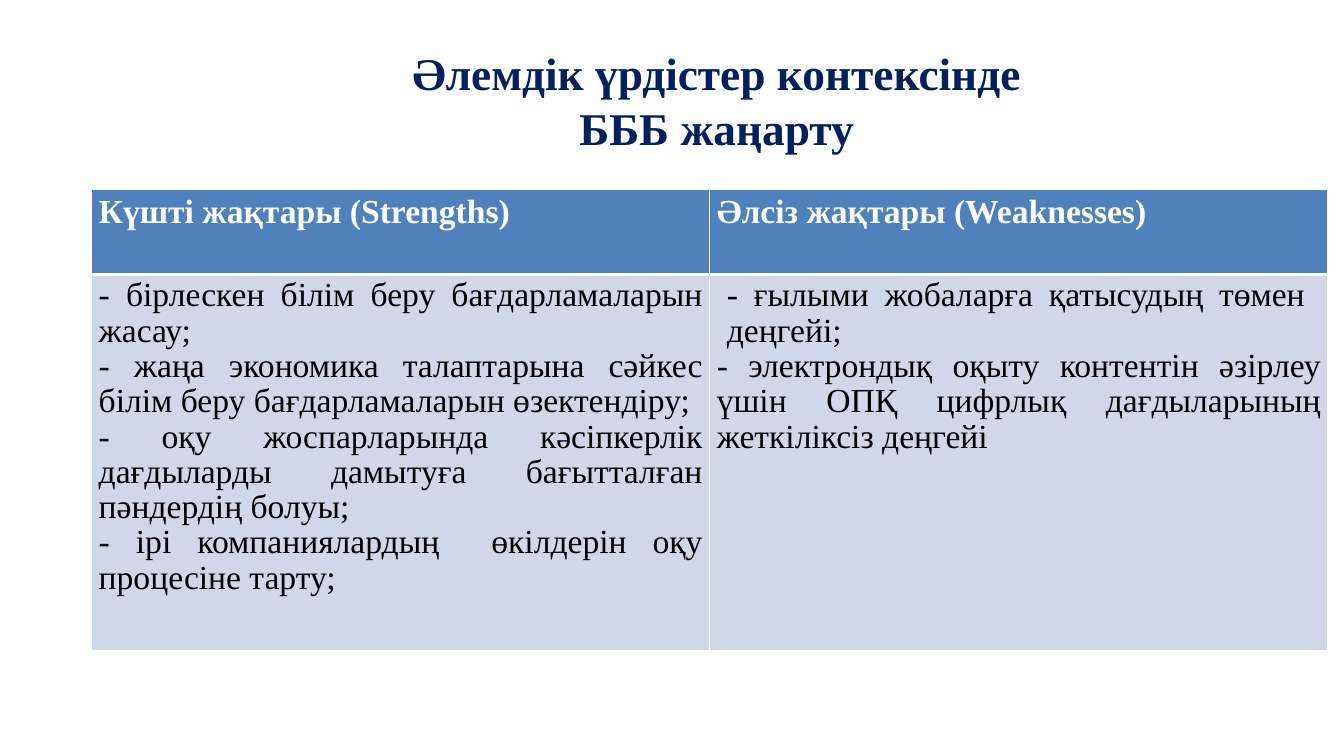
import pptx
import pptx.dml.color
import pptx.enum.text
import pptx.oxml
import pptx.oxml.ns
import pptx.util
from lxml import etree

Pt = pptx.util.Pt
ALIGN = pptx.enum.text.PP_ALIGN
ANCHOR = pptx.enum.text.MSO_ANCHOR


def color(value):
    return pptx.dml.color.RGBColor.from_string(value)


def apply(target, values):
    for name, value in values.items():
        setattr(target, name, value)


class SlideBuilder:
    font = "Times New Roman"
    title_text = {"size": Pt(32.4), "bold": True}
    header_text = {"size": Pt(24), "bold": True}
    body_text = {"size": Pt(24), "bold": False}
    body_para = {"alignment": ALIGN.JUSTIFY, "line_spacing": 0.95}
    cell_margins = {
        "margin_left": Pt(5),
        "margin_right": Pt(5),
        "margin_top": Pt(3),
        "margin_bottom": Pt(3),
    }

    def __init__(self, page):
        self.page = page

    def paragraph(self, para, text, span_format, text_color, para_format):
        para.text = text
        apply(para, para_format)
        for span in para.runs:
            apply(span.font, {"name": self.font, **span_format})
            span.font.color.rgb = color(text_color)

    def title(self, text, left, top, width, height):
        box = self.page.shapes.add_textbox(Pt(left), Pt(top), Pt(width), Pt(height))
        line_height = Pt(39.3)
        apply(box.text_frame, {
            "word_wrap": True,
            "vertical_anchor": ANCHOR.MIDDLE,
            "margin_top": 0,
            "margin_bottom": line_height,
        })
        self.paragraph(box.text_frame.paragraphs[0], text, self.title_text, "002060",
                       {"alignment": ALIGN.CENTER, "line_spacing": line_height})

    def borders(self, cell, widths):
        properties = cell._tc.get_or_add_tcPr()
        for position, (side, width) in enumerate(widths.items()):
            line = etree.Element(pptx.oxml.ns.qn(f"a:ln{side}"), w=str(Pt(width)))
            fill = etree.SubElement(line, pptx.oxml.ns.qn("a:solidFill"))
            etree.SubElement(fill, pptx.oxml.ns.qn("a:srgbClr"), val="FFFFFF")
            properties.insert(position, line)

    def cell(self, cell, lines, fill, span_format, text_color, para_format, widths):
        apply(cell, self.cell_margins)
        cell.fill.solid()
        cell.fill.fore_color.rgb = color(fill)
        self.borders(cell, widths)
        frame = cell.text_frame
        for number, text in enumerate(lines):
            para = frame.add_paragraph() if number else frame.paragraphs[0]
            self.paragraph(para, text, span_format, text_color, para_format)

    def table(self, columns, left, top, width, heights):
        frame = self.page.shapes.add_table(
            2, len(columns), Pt(left), Pt(top), Pt(width), Pt(sum(heights)))
        table = frame.table
        for row, height in zip(table.rows, heights):
            row.height = Pt(height)
        for number, (heading, points) in enumerate(columns):
            table.columns[number].width = Pt(width / len(columns))
            self.cell(table.cell(0, number), [heading], "4F81BD", self.header_text,
                      "FFFFFF", {}, {"L": 1, "R": 1, "T": 1, "B": 3})
            self.cell(table.cell(1, number), points, "D0D8E8", self.body_text,
                      "000000", self.body_para, {"L": 1, "R": 1, "T": 3, "B": 1})
        return table

    def indent(self, para, left):
        para._p.get_or_add_pPr().set("marL", str(Pt(left)))


def main():
    deck = pptx.Presentation()
    apply(deck, {"slide_width": Pt(960), "slide_height": Pt(540)})
    builder = SlideBuilder(deck.slides.add_slide(deck.slide_layouts[6]))
    builder.title("Әлемдік үрдістер контексінде\vБББ жаңарту", 45.4, 45.4, 933, 90)
    strengths = [
        "- бірлескен білім беру бағдарламаларын жасау;",
        "- жаңа экономика талаптарына сәйкес білім беру бағдарламаларын өзектендіру;",
        "- оқу жоспарларында кәсіпкерлік дағдыларды дамытуға бағытталған пәндердің болуы;",
        "- ірі компаниялардың  өкілдерін оқу процесіне тарту;",
    ]
    weaknesses = [
        "- ғылыми жобаларға қатысудың төмен  деңгейі;",
        "- электрондық оқыту контентін әзірлеу үшін ОПҚ цифрлық дағдыларының "
        "жеткіліксіз деңгейі",
    ]
    table = builder.table(
        [("Күшті жақтары (Strengths)", strengths),
         ("Әлсіз жақтары (Weaknesses)", weaknesses)],
        65.5, 135.4, 883, [60.7, 268.6])
    builder.indent(table.cell(1, 1).text_frame.paragraphs[0], 7.2)
    deck.save("out.pptx")


if __name__ == "__main__":
    main()
